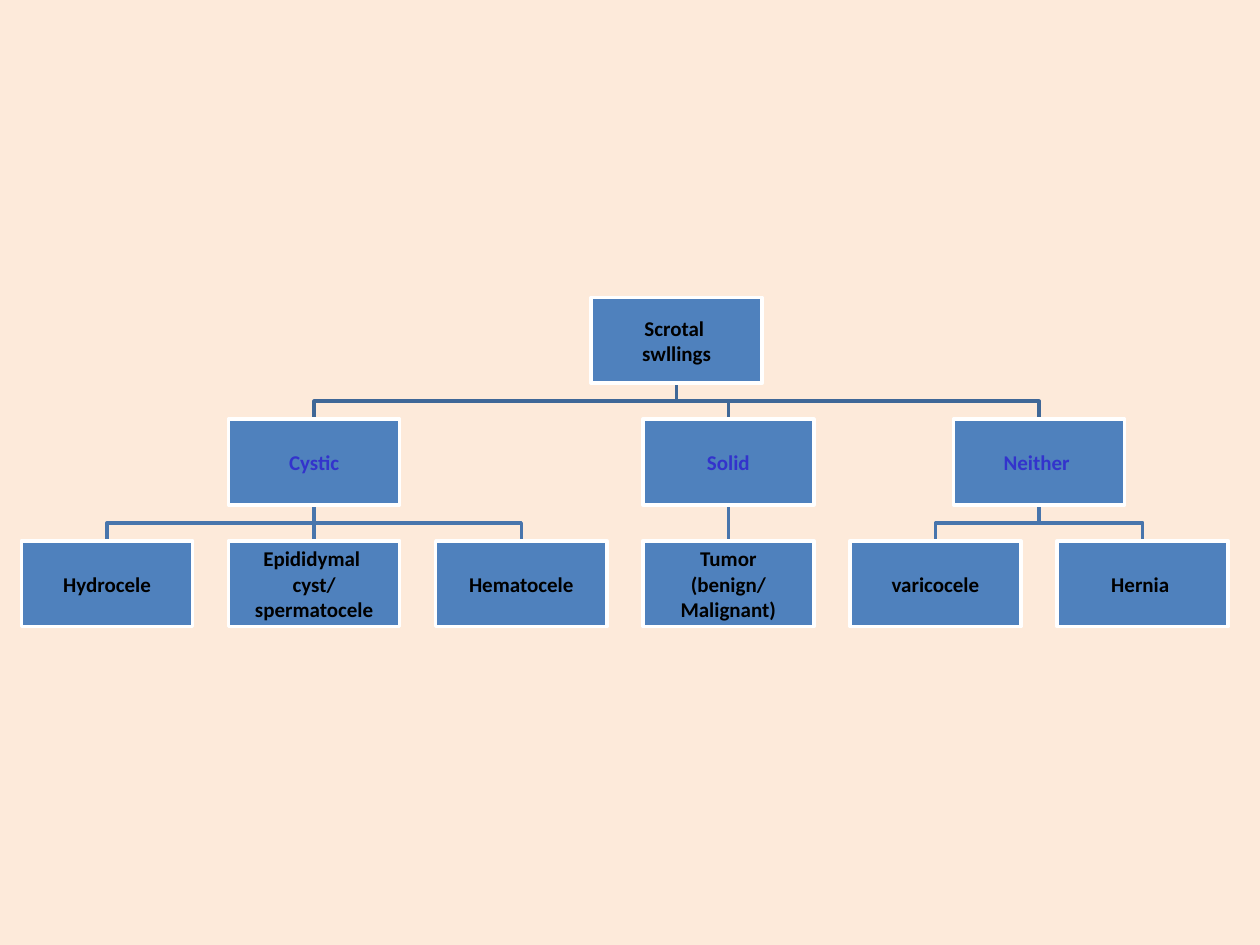
from pptx import Presentation
from pptx.dml.color import RGBColor
from pptx.enum.shapes import MSO_CONNECTOR, MSO_SHAPE
from pptx.enum.text import MSO_ANCHOR, PP_ALIGN
from pptx.oxml.ns import qn
from pptx.util import Pt
from lxml.etree import SubElement

# Content: the lines of each box, then its branches
ROOT = ["Scrotal ", "swllings"]
TREE = [
    (["Cystic"], [["Hydrocele"],
                  ["Epididymal ", "cyst/", "spermatocele"],
                  ["Hematocele"]]),
    (["Solid"], [["Tumor", "(benign/", "Malignant)"]]),
    (["Neither "], [["varicocele"], ["Hernia "]]),
]

# Colours
PEACH = RGBColor(0xFD, 0xEA, 0xDA)
BLUE = RGBColor(0x4F, 0x81, 0xBD)
WHITE = RGBColor(255, 255, 255)
BLACK = RGBColor(0, 0, 0)
INDIGO = RGBColor(0x33, 0x33, 0xCC)
UPPER = RGBColor(0x3F, 0x67, 0x97)
LOWER = RGBColor(0x48, 0x75, 0xAC)

# Layout in points
WIDE, HIGH = 97.8, 49
FIRST, STEP = 61.2, 118.35
ROWS = [170, 239.5, 309]

deck = Presentation()
deck.slide_width, deck.slide_height = Pt(720), Pt(540)
slide = deck.slides.add_slide(deck.slide_layouts[6])
slide.background.fill.solid()
slide.background.fill.fore_color.rgb = PEACH
shapes = slide.shapes


def add_box(lines, mid, row, color=BLACK):
    box = shapes.add_shape(MSO_SHAPE.RECTANGLE, Pt(mid - WIDE / 2),
                           Pt(ROWS[row]), Pt(WIDE), Pt(HIGH))
    box.shadow.inherit = False
    box.fill.solid()
    box.fill.fore_color.rgb = BLUE
    box.line.color.rgb = WHITE
    box.line.width = Pt(2)
    frame = box.text_frame
    frame.word_wrap = True
    frame.vertical_anchor = MSO_ANCHOR.MIDDLE
    frame.margin_left = frame.margin_right = Pt(0.7)
    frame.margin_top = frame.margin_bottom = Pt(0.7)
    for i, line in enumerate(lines):
        para = frame.add_paragraph() if i else frame.paragraphs[0]
        para.alignment = PP_ALIGN.CENTER
        run = para.add_run()
        run.text = line
        run.font.name = "Calibri"
        run.font.size = Pt(12)
        run.font.bold = True
        run.font.color.rgb = color


def add_link(start, end, row, color):
    top, low = ROWS[row] + HIGH, ROWS[row + 1]
    bend = (top + low) / 2
    if abs(start - end) < 0.01:
        link = shapes.add_connector(MSO_CONNECTOR.STRAIGHT, Pt(start),
                                    Pt(top), Pt(end), Pt(low))
        SubElement(link._element.spPr, qn("a:effectLst"))
    else:
        path = shapes.build_freeform(Pt(start), Pt(top))
        turns = [(start, bend), (end, bend), (end, low)]
        path.add_line_segments([(Pt(x), Pt(y)) for x, y in turns], close=False)
        link = path.convert_to_shape()
        link.shadow.inherit = False
        link.fill.background()
    link.line.color.rgb = color
    link.line.width = Pt(2)


# Each parent sits midway between its outer children
groups, count = [], 0
for name, leaves in TREE:
    mids = [FIRST + STEP * (count + i) for i in range(len(leaves))]
    count += len(leaves)
    groups.append((name, (mids[0] + mids[-1]) / 2, list(zip(leaves, mids))))
center = (groups[0][1] + groups[-1][1]) / 2

# Links lie behind the boxes
for name, mid, leaves in groups:
    add_link(center, mid, 0, UPPER)
    for leaf, spot in leaves:
        add_link(mid, spot, 1, LOWER)

# Boxes
add_box(ROOT, center, 0)
for name, mid, leaves in groups:
    add_box(name, mid, 1, INDIGO)
    for leaf, spot in leaves:
        add_box(leaf, spot, 2)

deck.save("out.pptx")
